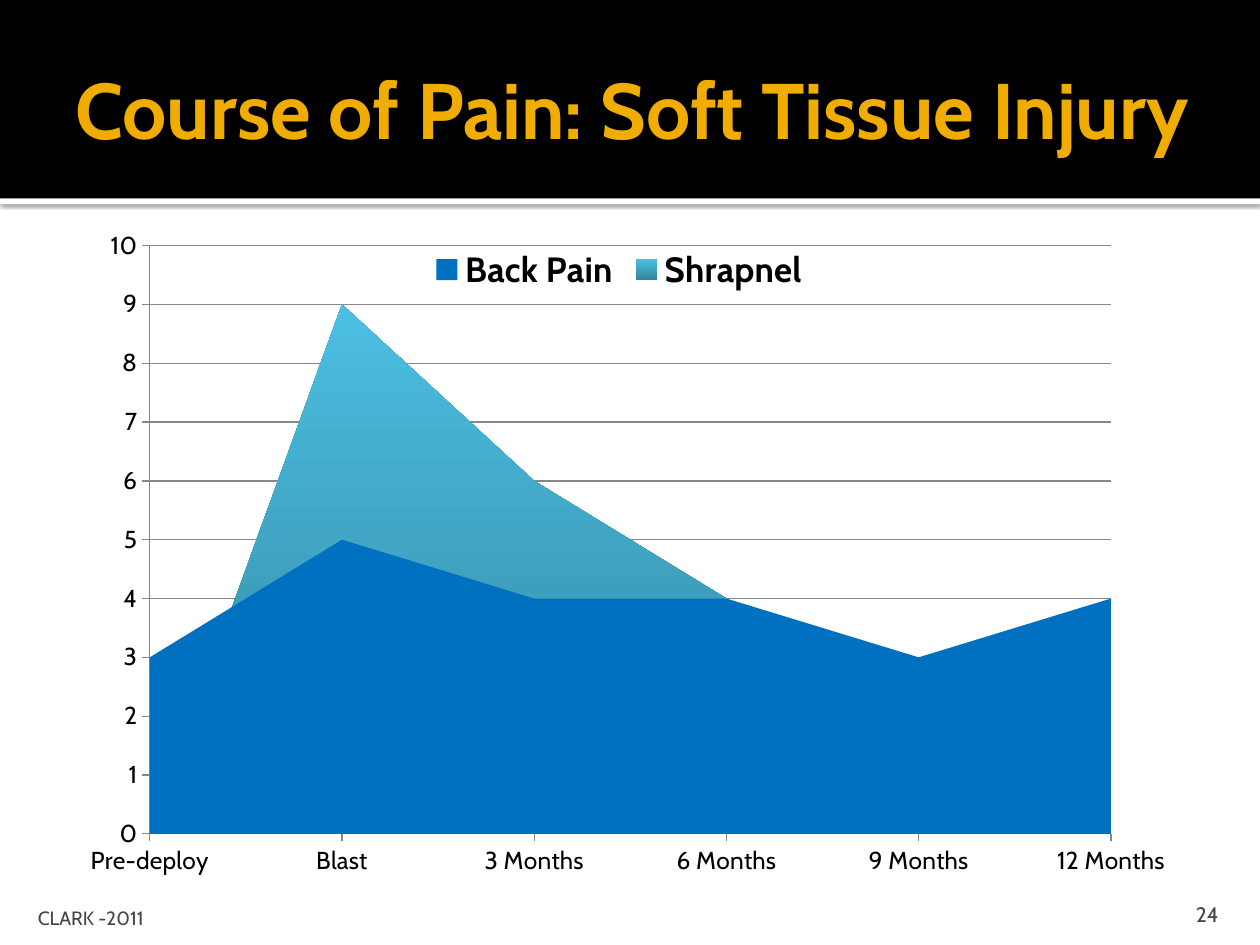
from lxml.etree import SubElement
from pptx import Presentation
from pptx.chart.data import CategoryChartData
from pptx.dml.color import RGBColor
from pptx.enum.chart import XL_CHART_TYPE, XL_LEGEND_POSITION, XL_TICK_MARK
from pptx.enum.shapes import MSO_SHAPE
from pptx.enum.text import MSO_ANCHOR, PP_ALIGN
from pptx.oxml import parse_xml
from pptx.oxml.ns import nsdecls, qn
from pptx.util import Inches, Pt

WIDE, HIGH = 10, 7.5
FACE = "Cabin"
MONTHS = ["Pre-deploy", "Blast", "3 Months", "6 Months", "9 Months", "12 Months"]
PAIN = {"Back Pain": [3, 5, 4, 4, 3, 4], "Shrapnel": [0, 9, 6, 4, 2, 1]}


def hue(code):
    return RGBColor.from_string(code)


def place(x, y, w, h):
    return [Inches(part * side) for part, side in zip((x, y, w, h), (WIDE, HIGH) * 2)]


def apply(target, values):
    for name, value in values.items():
        setattr(target, name, value)


def style(font, size, code, bold=False):
    apply(font, {"name": FACE, "size": Pt(size), "bold": bold})
    font.color.rgb = hue(code)


def add_band(slide, area, code):
    band = slide.shapes.add_shape(MSO_SHAPE.RECTANGLE, *place(*area))
    band.shadow.inherit = False
    band.fill.solid()
    band.fill.fore_color.rgb = hue(code)
    band.line.fill.background()
    return band


def cast_shade(band):
    effects = band.element.spPr.find(qn("a:effectLst"))
    shade = SubElement(effects, qn("a:outerShdw"), blurRad=str(Pt(2.5)),
                       dist=str(Pt(0.8)), dir="5400000", algn="tl", rotWithShape="0")
    tone = SubElement(shade, qn("a:srgbClr"), val="000000")
    SubElement(tone, qn("a:alpha"), val="60000")


def add_text(slide, area, words, size, code, pads, anchor, align=PP_ALIGN.LEFT, bold=False):
    frame = slide.shapes.add_textbox(*place(*area)).text_frame
    sides = ("margin_left", "margin_top", "margin_right", "margin_bottom")
    apply(frame, dict(zip(sides, map(Inches, pads))))
    apply(frame, {"word_wrap": True, "vertical_anchor": anchor})
    line = frame.paragraphs[0]
    line.alignment = align
    run = line.add_run()
    run.text = words
    style(run.font, size, code, bold)


def set_plot(chart, x, y, w, h):
    area = chart.element.find(".//" + qn("c:plotArea"))
    for old in area.findall(qn("c:layout")):
        area.remove(old)
    layout = parse_xml(f"<c:layout {nsdecls('c')}/>")
    box = SubElement(layout, qn("c:manualLayout"))
    marks = {"layoutTarget": "inner", "xMode": "edge", "yMode": "edge",
             "x": x, "y": y, "w": w, "h": h}
    for name, value in marks.items():
        SubElement(box, qn("c:" + name), val=str(value))
    area.insert(0, layout)
    area.find(".//" + qn("c:crossBetween")).set("val", "midCat")


def set_axis(axis):
    axis.major_tick_mark = XL_TICK_MARK.OUTSIDE
    axis.minor_tick_mark = XL_TICK_MARK.NONE
    style(axis.tick_labels.font, 14, "000000")
    apply(axis.format.line, {"width": Pt(0.75)})
    axis.format.line.color.rgb = hue("878787")


def paint(chart):
    back, shrapnel = chart.plots[0].series
    fill = back.format.fill
    fill.solid()
    fill.fore_color.rgb = hue("0070C0")
    tone = back.format.element if hasattr(back.format, "element") else None
    tone = back._element.find(".//" + qn("a:srgbClr")) if tone is None else tone
    SubElement(tone, qn("a:alpha"), val="25000")
    fill = shrapnel.format.fill
    fill.gradient()
    fill.gradient_angle = 90
    for stop, code, spot in zip(fill.gradient_stops, ("34859D", "4BBFE2"), (0, 1)):
        stop.color.rgb = hue(code)
        stop.position = spot
    for series in (back, shrapnel):
        series.format.line.fill.background()


def add_area(slide, area):
    data = CategoryChartData()
    data.categories = MONTHS
    for name, values in PAIN.items():
        data.add_series(name, values)
    chart = slide.shapes.add_chart(XL_CHART_TYPE.AREA, *place(*area), data).chart
    apply(chart, {"has_title": False, "has_legend": True})
    style(chart.font, 10, "000000")
    apply(chart.legend, {"position": XL_LEGEND_POSITION.TOP, "include_in_layout": False})
    chart.legend.include_in_layout = True
    style(chart.legend.font, 20, "000000", True)
    for axis in (chart.category_axis, chart.value_axis):
        set_axis(axis)
    apply(chart.category_axis, {"has_major_gridlines": False})
    apply(chart.value_axis, {"minimum_scale": 0, "maximum_scale": 10,
                             "major_unit": 1, "has_major_gridlines": True})
    grid = chart.value_axis.major_gridlines.format.line
    grid.width = Pt(0.75)
    grid.color.rgb = hue("878787")
    set_plot(chart, 0.078, 0.021, 0.864, 0.891)
    paint(chart)


def main():
    deck = Presentation()
    apply(deck, {"slide_width": Inches(WIDE), "slide_height": Inches(HIGH)})
    slide = deck.slides.add_slide(deck.slide_layouts[6])
    cast_shade(add_band(slide, (0, 0.21, 1, 0.006), "FFFFFF"))
    add_band(slide, (0, 0, 1, 0.21), "000000")
    add_text(slide, (0.05, 0.023, 0.9, 0.183), "Course of Pain: Soft Tissue Injury",
             45, "F0AD00", (0.1, 0.05, 0.05, 0.05), MSO_ANCHOR.MIDDLE, bold=True)
    add_text(slide, (0.025, 0.944, 0.602, 0.04), "CLARK -2011",
             11, "454545", (0.05, 0.05, 0.05, 0), MSO_ANCHOR.BOTTOM)
    add_text(slide, (0.897, 0.944, 0.08, 0.04), "24",
             12, "454545", (0.1, 0.05, 0.1, 0), MSO_ANCHOR.MIDDLE, PP_ALIGN.RIGHT)
    add_area(slide, (0.05, 0.244, 0.883, 0.7))
    deck.save("out.pptx")


if __name__ == "__main__":
    main()
